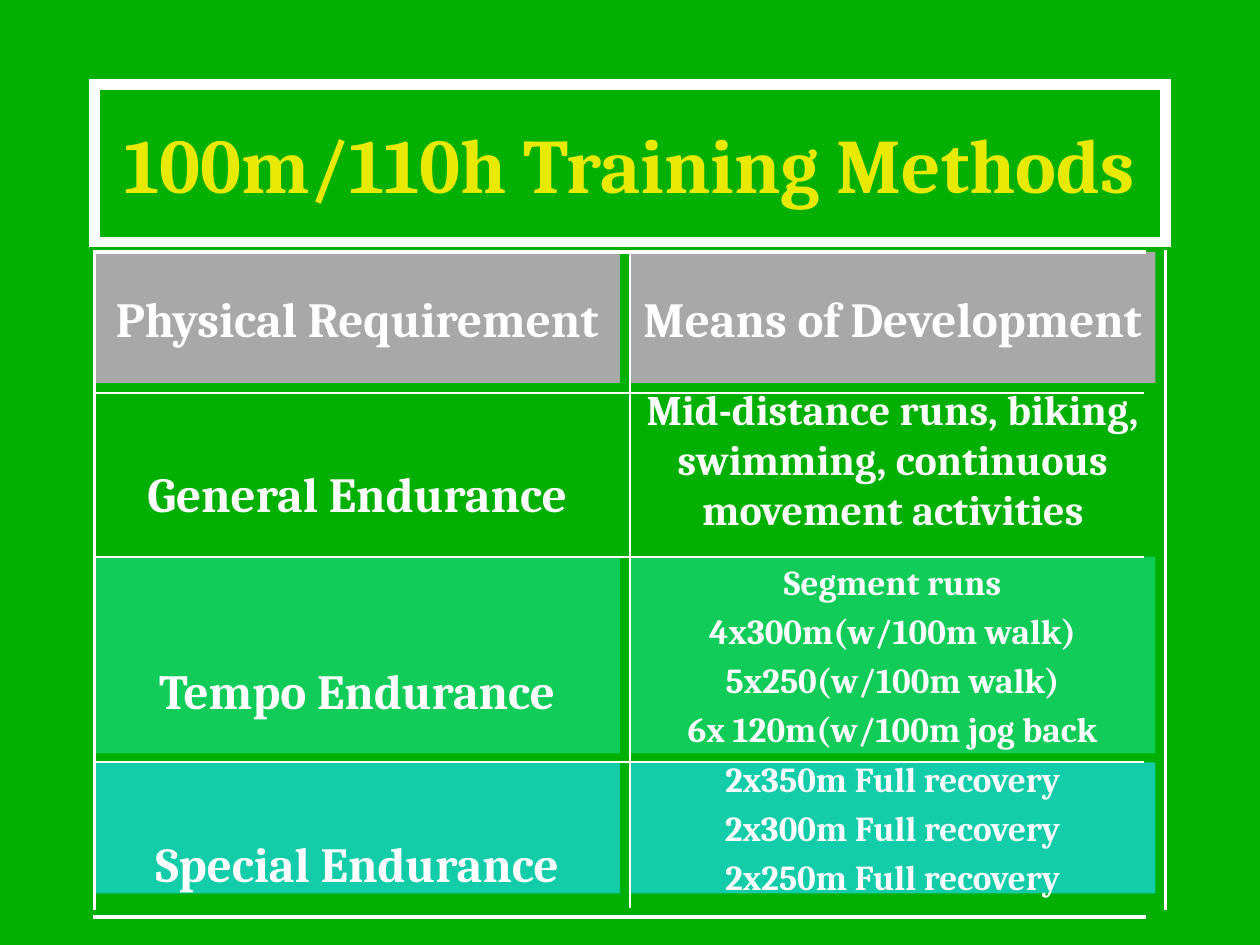
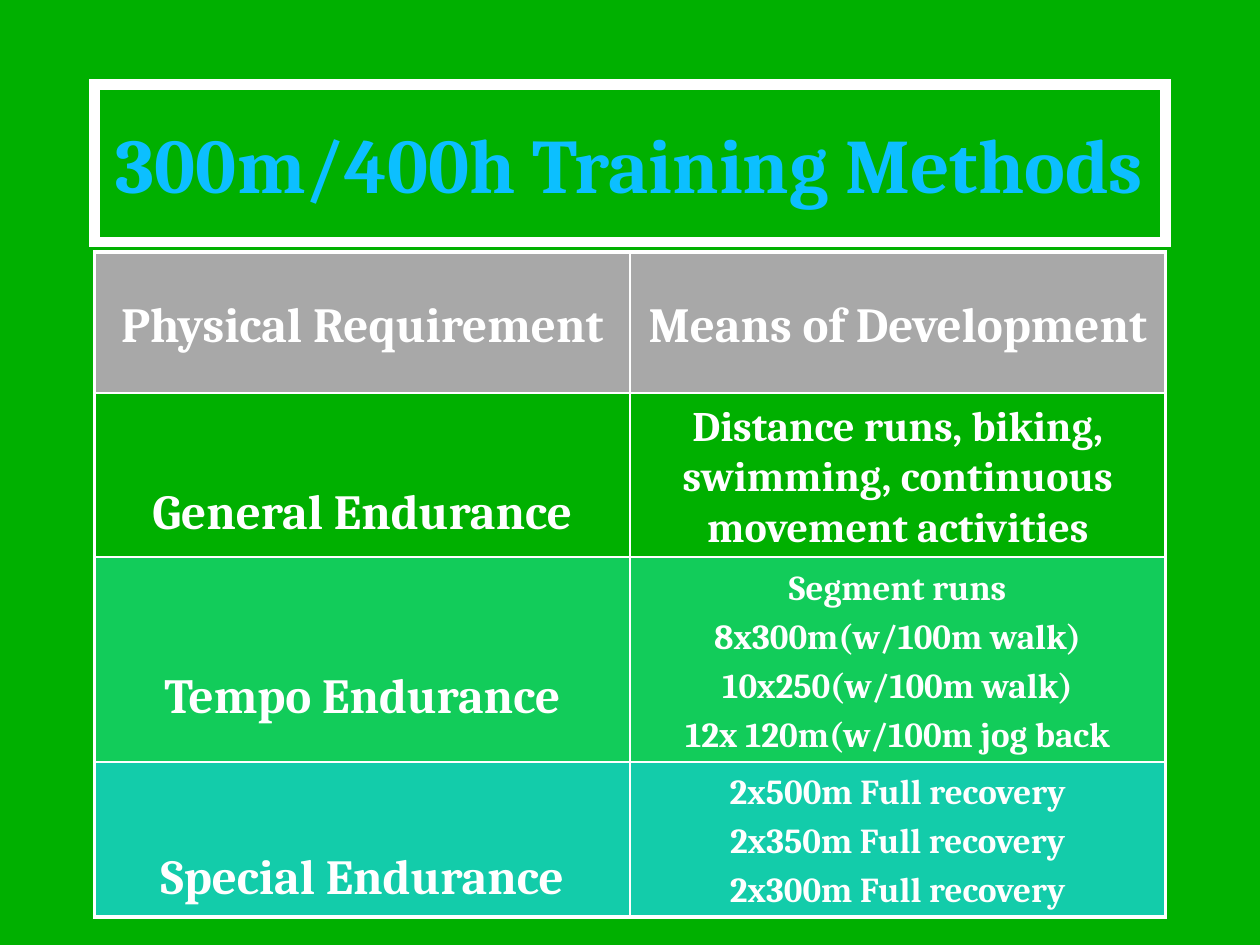
from dataclasses import dataclass
from itertools import pairwise

import pptx
import pptx.dml.color
import pptx.enum.shapes
import pptx.enum.text
import pptx.oxml
import pptx.oxml.ns
import pptx.util
from pptx.util import Inches

RGBColor = pptx.dml.color.RGBColor
Anchor = pptx.enum.text.MSO_ANCHOR

GREEN = RGBColor(0x00, 0xB0, 0x00)
MINT = RGBColor(0x12, 0xCC, 0x5A)
TEAL = RGBColor(0x13, 0xCC, 0xAA)
GREY = RGBColor(0xA8, 0xA8, 0xA8)
WHITE = RGBColor(0xFF, 0xFF, 0xFF)
YELLOW = RGBColor(0xE9, 0xE9, 0x06)
SKY = RGBColor(0x0C, 0xBF, 0xFF)

FONT = "Cambria"
HEAD_SIZE = 28
THICK, THIN = 2.25, 1
COLS = [0.75, 5, 9.25]  # column edges
RULES = [2, 3.12, 4.42, 6.05, 7.28]  # row edges


@dataclass
class Row:
    label: str
    means: list[str]
    size: int
    fill: RGBColor
    low: bool = True  # label sits below the middle of its row


@dataclass
class Grid:
    """Size of the filled tiles and where the ruled lines end."""
    width: float
    heights: list[float]
    right: float
    bottom: float


def plan(runs: str, tempo: list[str], special: list[str]) -> list[Row]:
    """The four rows both slides share, with their own workouts."""
    return [
        Row("Physical Requirement", ["Means of Development"], HEAD_SIZE, GREY, False),
        Row("General Endurance",
            [f"{runs} runs, biking, swimming, continuous movement activities"], 24, GREEN),
        Row("Tempo Endurance", ["Segment runs", *tempo], 20, MINT),
        Row("Special Endurance", [f"2x{dist}m Full recovery" for dist in special], 20, TEAL),
    ]


SPRINT = plan("Mid-distance",
              ["4x300m(w/100m walk)", "5x250(w/100m walk)", "6x 120m(w/100m jog back"],
              ["350", "300", "250"])
LONG = plan("Distance",
            ["8x300m(w/100m walk)", "10x250(w/100m walk)", "12x 120m(w/100m jog back"],
            ["500", "350", "300"])

LOOSE = Grid(4.17, [1.04, 1.04, 1.56, 1.04], 9.08, 7.21)
TIGHT = Grid(4.25, [end - top for top, end in pairwise(RULES)], COLS[-1], RULES[-1])


def write(frame, lines: list[str], size: int, color: RGBColor = WHITE) -> None:
    frame.word_wrap = True
    frame.vertical_anchor = Anchor.MIDDLE
    for i, line in enumerate(lines):
        para = frame.paragraphs[0] if i == 0 else frame.add_paragraph()
        para.text = line
        para.alignment = pptx.enum.text.PP_ALIGN.CENTER
        if i:
            para.space_before = pptx.util.Pt(size * 0.2)
        font = para.font
        font.name, font.size, font.bold = FONT, pptx.util.Pt(size), True
        font.color.rgb = color


def rule(line, width: float) -> None:
    """Make an outline white, with square ends and corners."""
    line.color.rgb = WHITE
    line.width = pptx.util.Pt(width)
    outline = line._get_or_add_ln()
    if width > THIN:
        outline.set("cap", "sq")
    outline.append(pptx.oxml.parse_xml(
        f"<a:miter {pptx.oxml.ns.nsdecls('a')} lim='800000'/>"))


def add_slide(deck, title: str, color: RGBColor):
    slide = deck.slides.add_slide(deck.slide_layouts[5])
    head = slide.shapes.title
    head.left, head.top = Inches(COLS[0]), Inches(0.67)
    head.width, head.height = Inches(8.5), Inches(1.25)
    rule(head.line, 6)
    head.text_frame.auto_size = pptx.enum.text.MSO_AUTO_SIZE.NONE
    write(head.text_frame, [title], 44, color)
    return slide


def add_line(slide, start: tuple[float, float], end: tuple[float, float],
             width: float) -> None:
    line = slide.shapes.add_connector(pptx.enum.shapes.MSO_CONNECTOR.STRAIGHT,
                                      *map(Inches, start + end))
    rule(line.line, width)
    line._element.spPr.append(pptx.oxml.parse_xml(
        f"<a:effectLst {pptx.oxml.ns.nsdecls('a')}/>"))


def add_tile(slide, left: float, top: float, width: float, height: float,
             fill: RGBColor):
    tile = slide.shapes.add_shape(pptx.enum.shapes.MSO_SHAPE.RECTANGLE,
                                  *map(Inches, (left, top, width, height)))
    tile.shadow.inherit = False
    tile.line.fill.background()
    tile.fill.solid()
    tile.fill.fore_color.rgb = fill
    frame = tile.text_frame
    frame.margin_left = frame.margin_right = Inches(0.08)
    return frame


def add_grid(slide, rows: list[Row], grid: Grid) -> None:
    for row, top, height in zip(rows, RULES, grid.heights):
        label, means = (add_tile(slide, left, top, grid.width, height, row.fill)
                        for left in COLS[:2])
        if row.low:
            label.margin_top, label.margin_bottom = Inches(0.56), Inches(0.01)
        write(label, [row.label], HEAD_SIZE)
        write(means, row.means, row.size)
    for y in RULES:
        edge = y in (RULES[0], RULES[-1])
        add_line(slide, (COLS[0], y), (grid.right, y), THICK if edge else THIN)
    for x in COLS:
        edge = x in (COLS[0], COLS[-1])
        add_line(slide, (x, RULES[0]), (x, grid.bottom), THICK if edge else THIN)


def main() -> None:
    deck = pptx.Presentation()
    deck.slide_width, deck.slide_height = Inches(10), Inches(7.5)
    back = deck.slide_master.background.fill
    back.solid()
    back.fore_color.rgb = GREEN
    add_grid(add_slide(deck, "100m/110h Training Methods", YELLOW), SPRINT, LOOSE)
    add_grid(add_slide(deck, "300m/400h Training Methods", SKY), LONG, TIGHT)
    deck.save("out.pptx")


if __name__ == "__main__":
    main()
